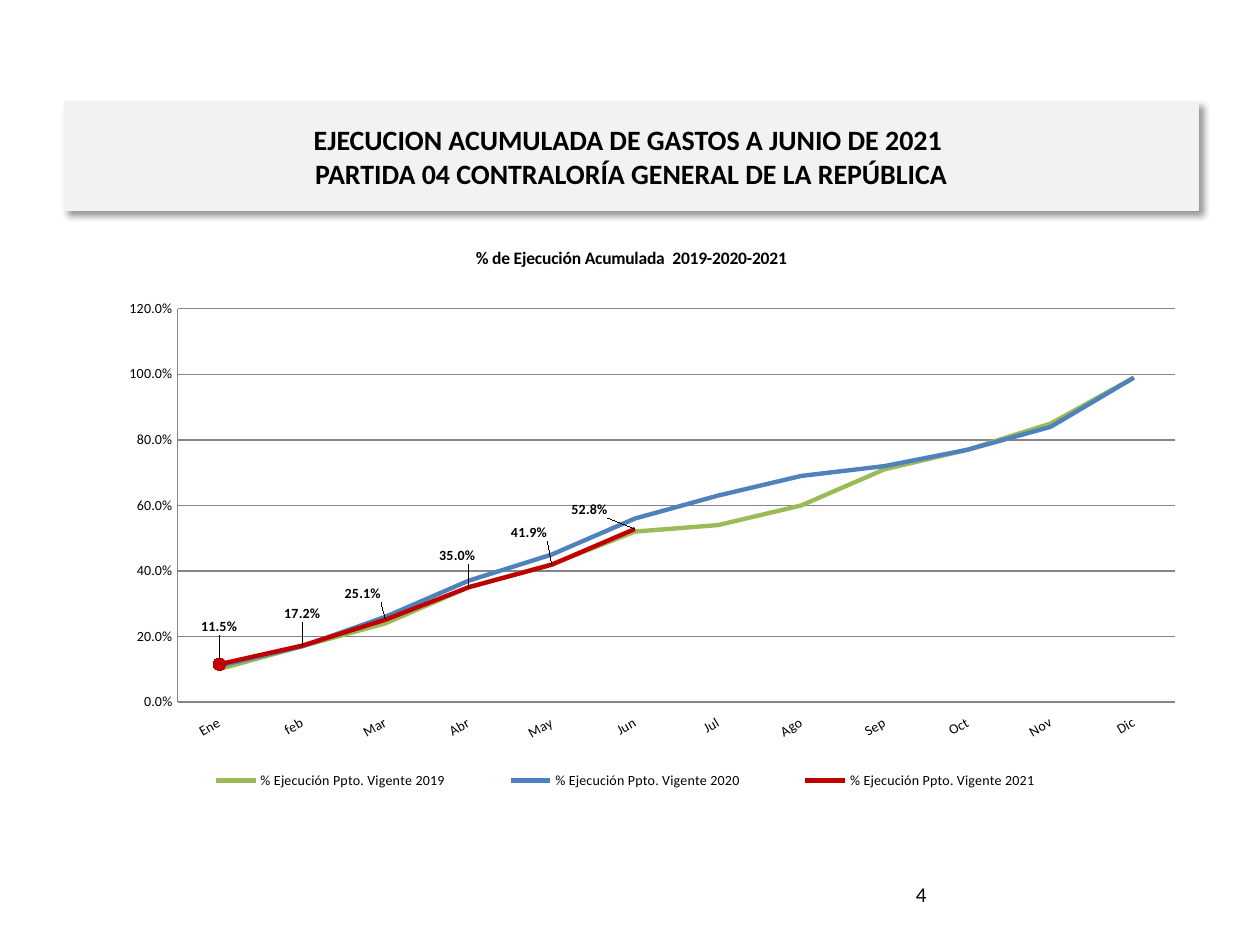
import pptx
import pptx.chart.data
import pptx.dml.color
import pptx.enum.chart
import pptx.enum.text
import pptx.oxml
import pptx.oxml.ns
import pptx.util
from pptx.util import Inches

FONT = "Calibri"
COLORS = {
    "text": "000000",
    "banner": "F2F2F2",
    "axis": "868686",
    "2019": "9BBB59",
    "2020": "4F81BD",
    "2021": "C00000",
}
MONTHS = ["Ene", "feb", "Mar", "Abr", "May", "Jun",
          "Jul", "Ago", "Sep", "Oct", "Nov", "Dic"]
EXECUTION = {
    "2019": [0.1, 0.17, 0.24, 0.35, 0.42, 0.52, 0.54, 0.6, 0.71, 0.77, 0.85, 0.99],
    "2020": [0.11, 0.17, 0.26, 0.37, 0.45, 0.56, 0.63, 0.69, 0.72, 0.77, 0.84, 0.99],
    "2021": [0.115, 0.172, 0.251, 0.35, 0.419, 0.528] + [None] * 6,
}
LABEL_SHIFTS = [(0, -0.03), (0, -0.03), (-0.02, -0.02),
                (-0.01, -0.03), (-0.02, -0.03), (-0.04, -0.01)]
PERCENT = "0.0%"


def rgb(name):
    return pptx.dml.color.RGBColor.from_string(COLORS[name])


def set_font(font, size, bold=False):
    font.name = FONT
    font.size = pptx.util.Pt(size)
    font.bold = bold
    font.color.rgb = rgb("text")


def set_line(line, color, width):
    line.color.rgb = rgb(color)
    line.width = pptx.util.Pt(width)


def xml(tag, inner="", attrs=""):
    ns = pptx.oxml.ns.nsdecls("a", "c")
    return pptx.oxml.parse_xml(f"<{tag} {ns} {attrs}>{inner}</{tag}>")


def manual_layout(**parts):
    inner = "".join(f'<c:{k} val="{v}"/>' for k, v in parts.items())
    return xml("c:layout", f"<c:manualLayout>{inner}</c:manualLayout>")


def replace_layout(parent, layout, before):
    for old in parent.findall(pptx.oxml.ns.qn("c:layout")):
        parent.remove(old)
    if before is None:
        parent.insert(0, layout)
    else:
        parent.find(pptx.oxml.ns.qn(before)).addnext(layout)


def add_banner(s, left, top, width, height):
    sp = s.shapes.title
    sp.left, sp.top, sp.width, sp.height = left, top, width, height
    sp.fill.solid()
    sp.fill.fore_color.rgb = rgb("banner")
    set_line(sp.line, "banner", 0.75)
    sp._element.spPr.append(xml(
        "a:effectLst",
        '<a:outerShdw blurRad="50800" dist="38100" dir="2700000" algn="tl" rotWithShape="0">'
        '<a:srgbClr val="000000"><a:alpha val="40000"/></a:srgbClr></a:outerShdw>'))
    tf = sp.text_frame
    tf.word_wrap = True
    tf.auto_size = pptx.enum.text.MSO_AUTO_SIZE.NONE
    tf.vertical_anchor = pptx.enum.text.MSO_ANCHOR.MIDDLE
    p = tf.paragraphs[0]
    p.alignment = pptx.enum.text.PP_ALIGN.CENTER
    lines = ["EJECUCION ACUMULADA DE GASTOS A JUNIO DE 2021 ",
             "PARTIDA 04 CONTRALORÍA GENERAL DE LA REPÚBLICA"]
    for i, text in enumerate(lines):
        if i:
            p.add_line_break()
        r = p.add_run()
        r.text = text
        set_font(r.font, 16, True)


def format_axes(chart):
    for axis in (chart.category_axis, chart.value_axis):
        axis.major_tick_mark = pptx.enum.chart.XL_TICK_MARK.NONE
        axis.minor_tick_mark = pptx.enum.chart.XL_TICK_MARK.NONE
        set_font(axis.tick_labels.font, 8)
        set_line(axis.format.line, "axis", 0.75)
    cat, val = chart.category_axis, chart.value_axis
    cat.tick_label_position = pptx.enum.chart.XL_TICK_LABEL_POSITION.LOW
    body = cat._element.find(".//" + pptx.oxml.ns.qn("a:bodyPr"))
    body.set("rot", "-1800000")
    body.set("vert", "horz")
    val.minimum_scale, val.maximum_scale, val.major_unit = 0, 1.2, 0.2
    val.has_major_gridlines = True
    set_line(val.major_gridlines.format.line, "axis", 0.75)
    val.tick_labels.number_format = PERCENT
    val.tick_labels.number_format_is_linked = False


def label_series(series):
    labels = series.data_labels
    labels.show_value = True
    labels.number_format = PERCENT
    labels.number_format_is_linked = False
    labels.position = pptx.enum.chart.XL_LABEL_POSITION.ABOVE
    set_font(labels.font, 8, True)
    for i, (x, y) in enumerate(LABEL_SHIFTS):
        label = series.points[i].data_label
        set_font(label.font, 8, True)
        label.position = pptx.enum.chart.XL_LABEL_POSITION.ABOVE
    for dlbl, (x, y) in zip(series._element.iter(pptx.oxml.ns.qn("c:dLbl")), LABEL_SHIFTS):
        layout = manual_layout(x=x, y=y)
        replace_layout(dlbl, layout, "c:idx")
        layout.addnext(xml("c:numFmt", attrs=f'formatCode="{PERCENT}" sourceLinked="0"'))


def mark_first_point(series, color):
    point = series.points[0]
    set_line(point.format.line, color, 2.5)
    marker = point.marker
    marker.style = pptx.enum.chart.XL_MARKER_STYLE.CIRCLE
    marker.size = 7
    marker.format.fill.solid()
    marker.format.fill.fore_color.rgb = rgb(color)
    set_line(marker.format.line, color, 0.75)


def add_execution_chart(s, left, top, width, height):
    data = pptx.chart.data.CategoryChartData(number_format=PERCENT)
    data.categories = MONTHS
    for year, values in EXECUTION.items():
        data.add_series(f"% Ejecución Ppto. Vigente {year}", values)
    chart = s.shapes.add_chart(pptx.enum.chart.XL_CHART_TYPE.LINE,
                               left, top, width, height, data).chart
    set_font(chart.font, 10)
    chart.has_title = True
    r = chart.chart_title.text_frame.paragraphs[0].add_run()
    r.text = "% de Ejecución Acumulada  2019-2020-2021"
    set_font(r.font, 10, True)
    chart.chart_title.include_in_layout = False
    format_axes(chart)
    for year, series in zip(EXECUTION, chart.plots[0].series):
        series.smooth = False
        series.marker.style = pptx.enum.chart.XL_MARKER_STYLE.NONE
        set_line(series.format.line, year, 2.5)
    mark_first_point(series, year)
    label_series(series)

    chart.has_legend = True
    legend = chart.legend
    legend.position = pptx.enum.chart.XL_LEGEND_POSITION.BOTTOM
    legend.include_in_layout = False
    set_font(legend.font, 8)
    replace_layout(legend._element, manual_layout(
        xMode="edge", yMode="edge", x=0.08, y=0.89, w=0.83, h=0.06), "c:legendPos")
    plot_area = chart._chartSpace.chart.plotArea
    replace_layout(plot_area, manual_layout(
        layoutTarget="inner", xMode="edge", yMode="edge",
        x=0.1, y=0.14, w=0.88, h=0.65), None)


def add_page_number(s, left, top, width, height):
    tf = s.shapes.add_textbox(left, top, width, height).text_frame
    tf.word_wrap = True
    r = tf.paragraphs[0].add_run()
    r.text = "4"
    set_font(r.font, 12)


def main():
    prs = pptx.Presentation()
    prs.slide_width, prs.slide_height = Inches(10), Inches(7.5)
    s = prs.slides.add_slide(prs.slide_layouts[5])
    add_page_number(s, Inches(7.17), Inches(6.95), Inches(2.33), Inches(0.4))
    add_banner(s, Inches(0.51), Inches(0.81), Inches(9), Inches(0.86))
    add_execution_chart(s, Inches(0.51), Inches(1.78), Inches(9), Inches(4.8))
    prs.save("out.pptx")


if __name__ == "__main__":
    main()
